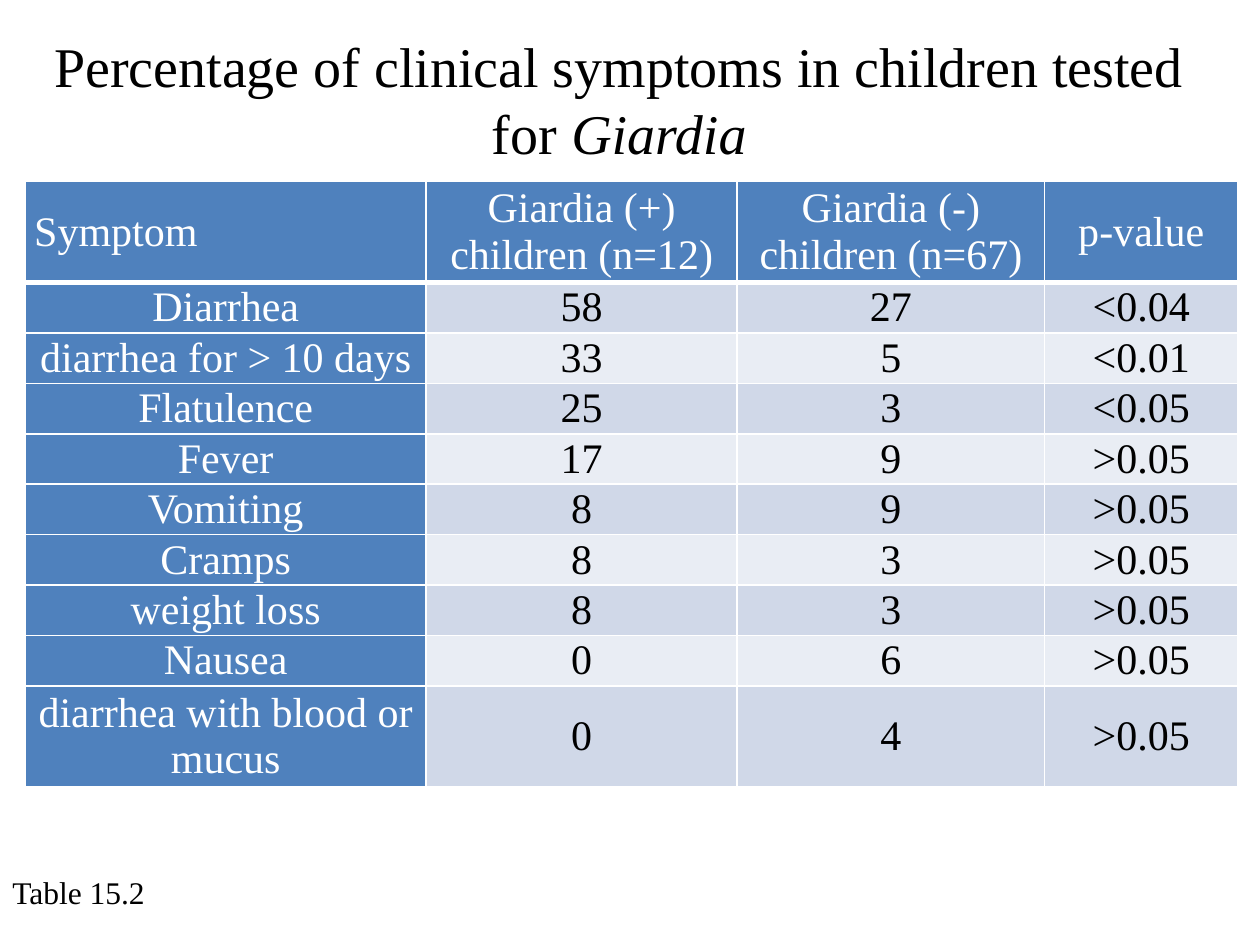
from dataclasses import dataclass

from lxml.etree import SubElement
from pptx import Presentation
from pptx.dml.color import RGBColor as RGB
from pptx.enum.text import MSO_ANCHOR as Anchor, MSO_AUTO_SIZE as AutoSize, PP_ALIGN as Align
from pptx.oxml.ns import qn
from pptx.util import Cm, Pt


@dataclass(frozen=True)
class Theme:
    font: str = "Times New Roman"
    ink: str = "000000"
    paper: str = "FFFFFF"
    head: str = "4F81BD"
    bands: tuple = ("D0D8E8", "E9EDF4")
    title_size: int = 32
    table_size: int = 24
    caption_size: int = 18
    rule: int = 1
    head_rule: int = 3


THEME = Theme()
COLUMNS = (8.08, 6.27, 6.2, 3.89)
ROW_HEIGHT = 0.97
ROWS = (
    ("Symptom", "Giardia (+) children (n=12)", "Giardia (-) children (n=67)", "p-value"),
    ("Diarrhea", "58", "27", "<0.04"),
    ("diarrhea for > 10 days", "33", "5", "<0.01"),
    ("Flatulence", "25", "3", "<0.05"),
    ("Fever", "17", "9", ">0.05"),
    ("Vomiting", "8", "9", ">0.05"),
    ("Cramps", "8", "3", ">0.05"),
    ("weight loss", "8", "3", ">0.05"),
    ("Nausea", "0", "6", ">0.05"),
    ("diarrhea with blood or mucus", "0", "4", ">0.05"),
)


def style_text(para, size, color, align):
    para.alignment = align
    for span in para.runs:
        span.font.name = THEME.font
        span.font.size = Pt(size)
        span.font.bold = False
        span.font.color.rgb = RGB.from_string(color)


def place(shape, box):
    shape.left, shape.top, shape.width, shape.height = map(Cm, box)


def add_title(page, box):
    title = page.shapes.title
    place(title, box)
    frame = title.text_frame
    frame.word_wrap = True
    frame.vertical_anchor = Anchor.MIDDLE
    para = frame.paragraphs[0]
    para.text = "Percentage of clinical symptoms in children tested for "
    species = para.add_run()
    species.text = "Giardia"
    species.font.italic = True
    style_text(para, THEME.title_size, THEME.ink, Align.CENTER)


def set_borders(cell, bottom_width):
    # Border lines must precede the fill in the cell properties
    properties = cell._tc.get_or_add_tcPr()
    widths = {"a:lnL": THEME.rule, "a:lnR": THEME.rule, "a:lnT": THEME.rule, "a:lnB": bottom_width}
    for tag, width in widths.items():
        line = SubElement(properties, qn(tag), w=str(Pt(width)))
        fill = SubElement(line, qn("a:solidFill"))
        SubElement(fill, qn("a:srgbClr"), val=THEME.paper)


def format_cell(cell, text, row, column):
    header = row == 0
    labelled = header or column == 0
    set_borders(cell, THEME.head_rule if header else THEME.rule)
    cell.fill.solid()
    cell.fill.fore_color.rgb = RGB.from_string(
        THEME.head if labelled else THEME.bands[(row - 1) % 2])
    cell.vertical_anchor = Anchor.MIDDLE
    cell.margin_left = cell.margin_right = Cm(0.18)
    cell.margin_top = cell.margin_bottom = 0
    cell.text_frame.text = text
    align = Align.LEFT if header and column == 0 else Align.CENTER
    style_text(cell.text_frame.paragraphs[0], THEME.table_size,
               THEME.paper if labelled else THEME.ink, align)


def add_symptom_table(page, box):
    holder = page.shapes.add_table(len(ROWS), len(COLUMNS), *map(Cm, box))
    table = holder.table
    table.first_col = True
    for column, width in zip(table.columns, COLUMNS):
        column.width = Cm(width)
    for index, row in enumerate(table.rows):
        row.height = Cm(ROW_HEIGHT * (2 if index == 0 else 1))
    for r, values in enumerate(ROWS):
        for c, text in enumerate(values):
            format_cell(table.cell(r, c), text, r, c)
    # Rows stretch to fill the full box
    place(holder, box)


def add_caption(page, box):
    caption = page.shapes.add_textbox(*map(Cm, box))
    frame = caption.text_frame
    frame.word_wrap = False
    frame.auto_size = AutoSize.SHAPE_TO_FIT_TEXT
    frame.text = "Table 15.2"
    style_text(frame.paragraphs[0], THEME.caption_size, THEME.ink, Align.LEFT)


def main():
    deck = Presentation()
    deck.slide_width, deck.slide_height = Cm(25.4), Cm(19.05)
    page = deck.slides.add_slide(deck.slide_layouts[5])
    add_title(page, (0.51, 0.48, 23.95, 3))
    add_caption(page, (0, 17.48, 3.38, 1.02))
    add_symptom_table(page, (0.51, 3.66, sum(COLUMNS), 12.19))
    deck.save("out.pptx")


if __name__ == "__main__":
    main()
